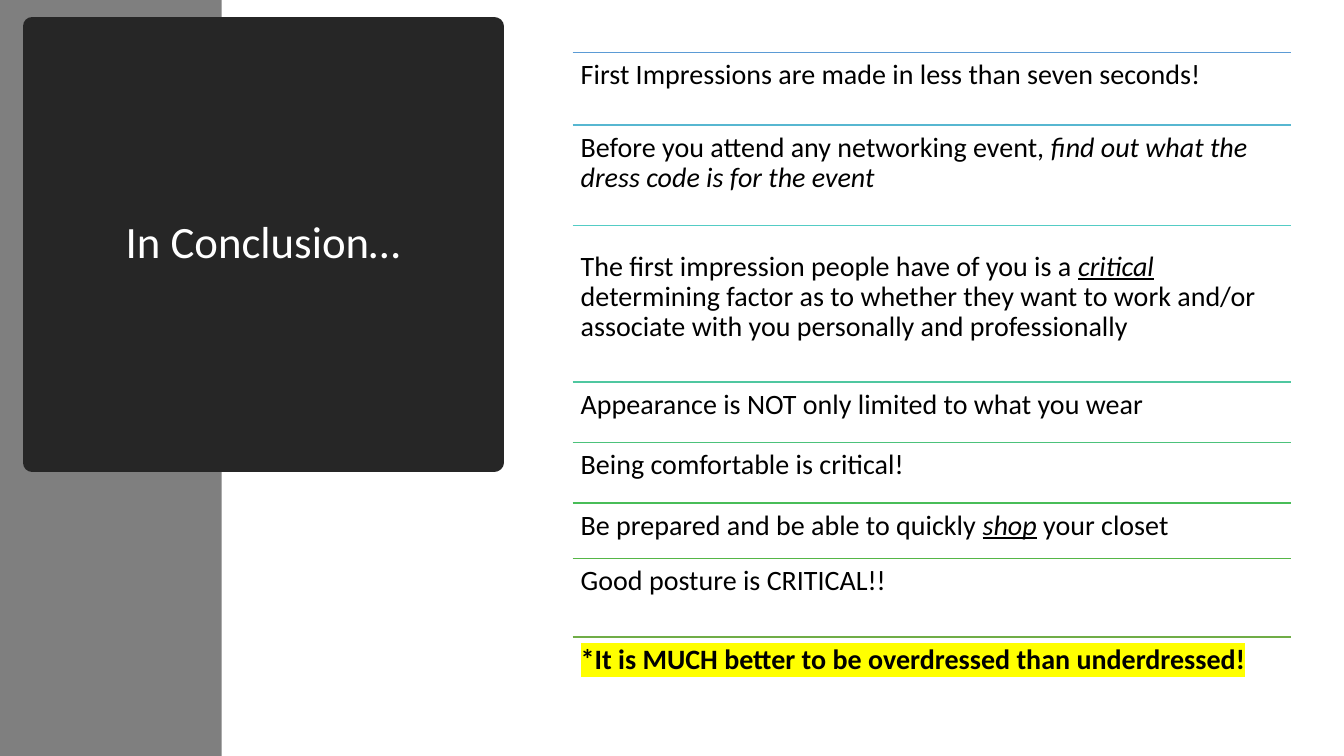
from dataclasses import dataclass
from lxml.etree import SubElement
from pptx import Presentation
from pptx.dml.color import RGBColor as RGB
from pptx.enum.shapes import MSO_CONNECTOR as Link, MSO_SHAPE as Shape
from pptx.enum.text import MSO_ANCHOR as Anchor, MSO_AUTO_SIZE as Fit, PP_ALIGN as Align
from pptx.oxml.ns import qn
from pptx.util import Inches, Pt

TITLE = "In Conclusion…"

# Each row: top, rule colour, gap above the text, runs of (text, style);
# styles: i italic, u underlined, b bold, h highlighted.
ROWS = [
    (0.52, "5B9BD5", 0, [("First Impressions are made in less than seven seconds!", "")]),
    (1.24, "57B7D1", 0, [("Before you attend any networking event, ", ""),
                         ("find out what the dress code is for the event", "i")]),
    (2.24, "53CCC5", 0.18, [("The first impression people have of you is a ", ""),
                            ("critical", "iu"),
                            (" determining factor as to whether they want to work and/or "
                             "associate with you personally and professionally", "")]),
    (3.79, "4FC7A0", 0, [("Appearance is NOT only limited to what you wear", "")]),
    (4.39, "4CC27B", 0, [("Being comfortable is critical!", "")]),
    (4.99, "48BD58", 0, [("Be prepared and be able to quickly ", ""), ("shop", "iu"),
                         (" your closet", "")]),
    (5.54, "55B646", 0, [("Good posture is CRITICAL!!", "")]),
    (6.32, "70AD47", 0, [("*It is MUCH better to be overdressed than underdressed!", "bh")]),
]
LEFT, WIDTH, END = 5.68, 7.12, 7.05


@dataclass(frozen=True)
class Theme:
    font: str = "Calibri"
    band: str = "7F7F7F"
    panel: str = "262626"
    light: str = "FFFFFF"
    ink: str = "000000"
    mark: str = "FFFF00"
    head: int = 32
    body: int = 20
    edge: float = 13.75
    rule: float = 1


THEME = Theme()


def paint(fill, color):
    fill.solid()
    fill.fore_color.rgb = RGB.from_string(color)


def style(para, size, color):
    para.line_spacing = 0.9
    para.font.name = THEME.font
    para.font.size = Pt(size)
    para.font.color.rgb = RGB.from_string(color)


def place(shape, *box):
    shape.left, shape.top, shape.width, shape.height = map(Inches, box)


def add_title(slide):
    title = slide.shapes.title
    place(title, 0.32, 0.26, 4.58, 4.33)
    paint(title.fill, THEME.panel)
    paint(title.line.fill, THEME.panel)
    title.line.width = Pt(THEME.edge)
    frame = title.text_frame
    frame.text = TITLE
    frame.auto_size = Fit.NONE
    frame.vertical_anchor = Anchor.MIDDLE
    para = frame.paragraphs[0]
    para.alignment = Align.CENTER
    style(para, THEME.head, THEME.light)


def add_band(slide):
    """Add the side band behind the title."""
    band = slide.shapes.add_shape(Shape.RECTANGLE, 0, 0, Inches(2.2), Inches(7.5))
    band.shadow.inherit = False
    paint(band.fill, THEME.band)
    band.line.fill.background()
    slide.shapes.title.element.addprevious(band.element)


def add_rule(group, top, color):
    y = Inches(top)
    rule = group.shapes.add_connector(
        Link.STRAIGHT, Inches(LEFT), y, Inches(LEFT + WIDTH), y)
    paint(rule.line.fill, color)
    rule.line.width = Pt(THEME.rule)
    SubElement(rule.element.spPr, qn("a:effectLst"))


def add_run(para, text, marks):
    run = para.add_run()
    run.text = text
    if "b" in marks:
        run.font.bold = True
    if "i" in marks:
        run.font.italic = True
    if "u" in marks:
        run.font.underline = True
    if "h" in marks:
        glow = SubElement(run._r.get_or_add_rPr(), qn("a:highlight"))
        SubElement(glow, qn("a:srgbClr"), val=THEME.mark)


def add_text(group, top, height, runs):
    box = group.shapes.add_textbox(
        Inches(LEFT), Inches(top), Inches(WIDTH), Inches(height))
    frame = box.text_frame
    frame.word_wrap = True
    frame.margin_left = frame.margin_right = Inches(0.08)
    frame.margin_top = frame.margin_bottom = Inches(0.08)
    para = frame.paragraphs[0]
    style(para, THEME.body, THEME.ink)
    for text, marks in runs:
        add_run(para, text, marks)


def add_rows(slide):
    group = slide.shapes.add_group_shape()
    ends = [row[0] for row in ROWS[1:]] + [END]
    for (top, color, gap, runs), end in zip(ROWS, ends):
        add_rule(group, top, color)
        add_text(group, top + gap, end - top, runs)


def main():
    deck = Presentation()
    deck.slide_width, deck.slide_height = Inches(13.33), Inches(7.5)
    slide = deck.slides.add_slide(deck.slide_layouts.get_by_name("Title Only"))
    add_title(slide)
    add_band(slide)
    add_rows(slide)
    deck.save("out.pptx")


if __name__ == "__main__":
    main()
